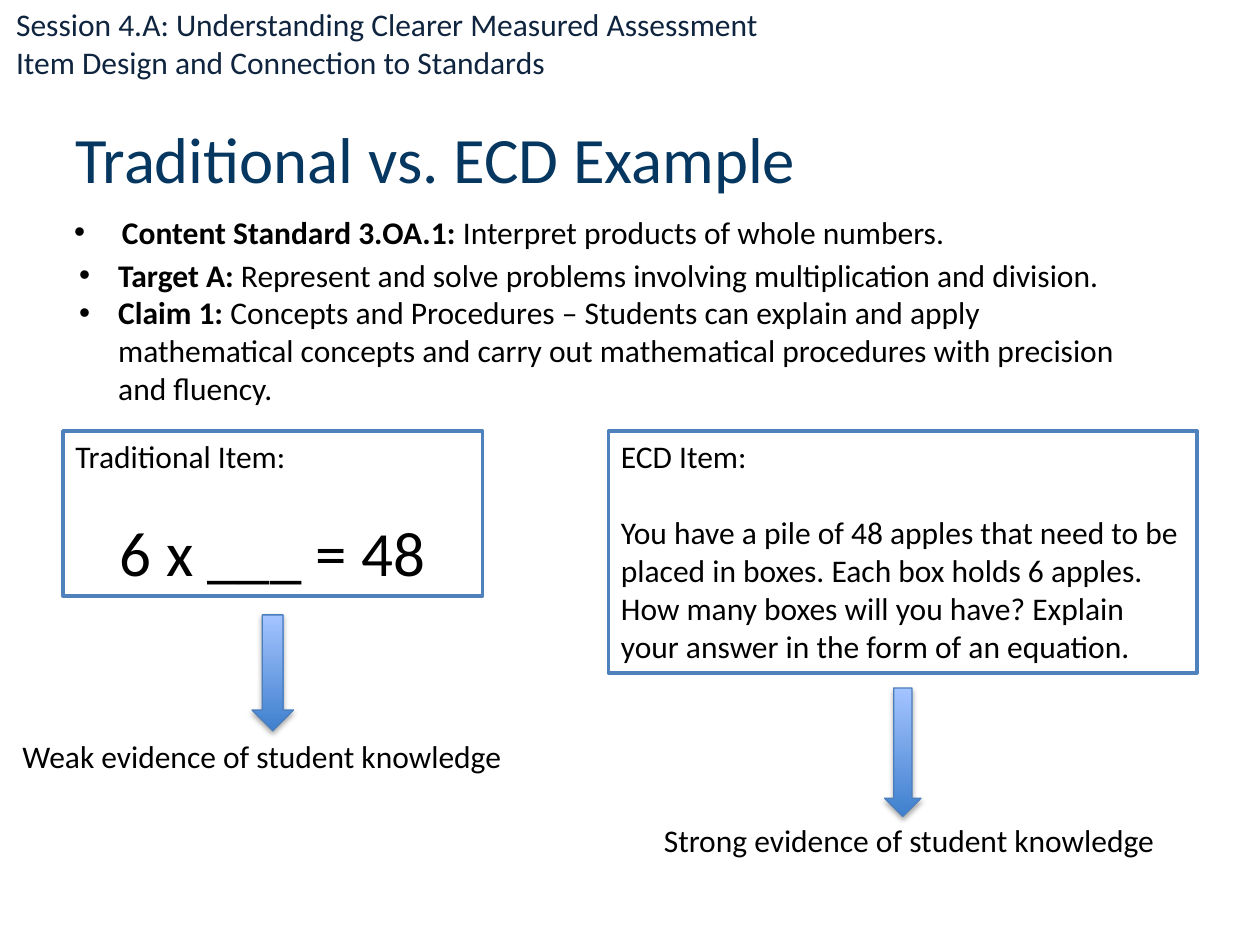
from dataclasses import dataclass

from lxml.etree import SubElement
from pptx import Presentation
from pptx.dml.color import RGBColor
from pptx.enum.shapes import MSO_SHAPE
from pptx.enum.text import MSO_ANCHOR, PP_ALIGN
from pptx.oxml import parse_xml
from pptx.oxml.ns import nsdecls, qn
from pptx.util import Inches, Pt

FONT = "Calibri"
BLACK = RGBColor(0x00, 0x00, 0x00)
WHITE = RGBColor(0xFF, 0xFF, 0xFF)
TITLE_BLUE = RGBColor(0x06, 0x37, 0x60)
HEADER_NAVY = RGBColor(0x0F, 0x24, 0x3E)
PANEL_BLUE = RGBColor(0x4F, 0x81, 0xBD)
ARROW_LINE = RGBColor(0x4B, 0x7E, 0xBC)
ARROW_DARK = RGBColor(0x3F, 0x80, 0xCE)
ARROW_LIGHT = RGBColor(0xA4, 0xC4, 0xFF)
BLANK_LINE = Pt(22)  # height of one skipped 18 pt line

SHADOW = f"""<a:effectLst {nsdecls("a")}>
  <a:outerShdw blurRad="39370" dist="22860" dir="5400000" rotWithShape="0">
    <a:srgbClr val="000000"><a:alpha val="35000"/></a:srgbClr>
  </a:outerShdw>
</a:effectLst>"""


@dataclass
class Area:
    left: float
    top: float
    width: float
    height: float

    def lengths(self):
        return [Inches(value) for value in (self.left, self.top, self.width, self.height)]


@dataclass
class Line:
    text: str
    lead: str = ""  # bold opening words
    size: float = 18
    color: RGBColor = BLACK
    indent: float = 0  # hanging bullet indent in inches
    centered: bool = False
    gap_before: bool = False


@dataclass
class Item:
    panel: Area
    lines: list[Line]
    arrow: Area
    verdict: Area
    verdict_text: str


def add_bullet(para, indent: float) -> None:
    properties = para._p.get_or_add_pPr()
    properties.set("marL", str(Inches(indent)))
    properties.set("indent", str(-Inches(indent)))
    SubElement(properties, qn("a:buFont"), typeface="Arial")
    SubElement(properties, qn("a:buChar"), char="•")


def write_lines(box, lines: list[Line], anchor=MSO_ANCHOR.TOP, wrap: bool = True) -> None:
    frame = box.text_frame
    frame.word_wrap = wrap
    frame.vertical_anchor = anchor
    for index, line in enumerate(lines):
        para = frame.paragraphs[0] if index == 0 else frame.add_paragraph()
        para.alignment = PP_ALIGN.CENTER if line.centered else PP_ALIGN.LEFT
        if line.gap_before:
            para.space_before = BLANK_LINE
        if line.indent:
            add_bullet(para, line.indent)
        for text, bold in ((line.lead, True), (line.text, False)):
            if text:
                span = para.add_run()
                span.text = text
                span.font.name = FONT
                span.font.size = Pt(line.size)
                span.font.bold = bold
                span.font.color.rgb = line.color


def add_text(page, area: Area, lines: list[Line], anchor=MSO_ANCHOR.TOP, wrap: bool = True) -> None:
    write_lines(page.shapes.add_textbox(*area.lengths()), lines, anchor, wrap)


def add_panel(page, area: Area, lines: list[Line]) -> None:
    box = page.shapes.add_shape(MSO_SHAPE.RECTANGLE, *area.lengths())
    box.shadow.inherit = False
    box.fill.solid()
    box.fill.fore_color.rgb = WHITE
    box.line.color.rgb = PANEL_BLUE
    box.line.width = Pt(2)
    write_lines(box, lines)


def add_arrow(page, area: Area) -> None:
    arrow = page.shapes.add_shape(MSO_SHAPE.DOWN_ARROW, *area.lengths())
    arrow.fill.gradient()
    arrow.fill.gradient_angle = 90
    for stop, color in zip(arrow.fill.gradient_stops, (ARROW_DARK, ARROW_LIGHT)):
        stop.color.rgb = color
    arrow.line.color.rgb = ARROW_LINE
    arrow.line.width = Pt(0.75)
    arrow._element.spPr.append(parse_xml(SHADOW))


ITEMS = [
    Item(
        Area(0.5, 3.42, 3.33, 1.31),
        [Line("Traditional Item:"), Line("6 x ___ = 48", size=36, centered=True, gap_before=True)],
        Area(2, 4.88, 0.33, 0.92),
        Area(0.08, 5.8, 4.17, 0.4),
        "Weak evidence of student knowledge",
    ),
    Item(
        Area(4.83, 3.42, 4.67, 1.92),
        [
            Line("ECD Item:"),
            Line(
                "You have a pile of 48 apples that need to be placed in boxes. "
                "Each box holds 6 apples. How many boxes will you have? "
                "Explain your answer in the form of an equation.",
                gap_before=True,
            ),
        ],
        Area(7.02, 5.46, 0.29, 1.02),
        Area(5.17, 6.47, 4.25, 0.4),
        "Strong evidence of student knowledge",
    ),
]


def main() -> None:
    deck = Presentation()
    deck.slide_width, deck.slide_height = Inches(10), Inches(7.5)
    page = deck.slides.add_slide(deck.slide_layouts[6])

    # Title and content standard
    add_text(page, Area(0.5, 0.75, 9, 1),
             [Line("Traditional vs. ECD Example", size=37, color=TITLE_BLUE)], MSO_ANCHOR.MIDDLE)
    add_text(page, Area(0.49, 1.64, 9.5, 0.4),
             [Line("Interpret products of whole numbers.", "Content Standard 3.OA.1: ", indent=0.38)])

    # Item panels with their arrows and verdicts
    for item in ITEMS:
        add_panel(page, item.panel, item.lines)
        add_arrow(page, item.arrow)
        add_text(page, item.verdict, [Line(item.verdict_text)])

    # Target and claim
    add_text(page, Area(0.53, 1.98, 8.42, 1.31), [
        Line(" Represent and solve problems involving multiplication and division.",
             "Target A:", indent=0.31),
        Line(" Concepts and Procedures – Students can explain and apply mathematical concepts "
             "and carry out mathematical procedures with precision and fluency.",
             "Claim 1:", indent=0.31),
    ])

    # Session header
    add_text(page, Area(0.03, -0.01, 6.2, 0.71), [
        Line("Session 4.A: Understanding Clearer Measured Assessment", color=HEADER_NAVY),
        Line("Item Design and Connection to Standards", color=HEADER_NAVY),
    ], wrap=False)

    deck.save("out.pptx")


if __name__ == "__main__":
    main()
